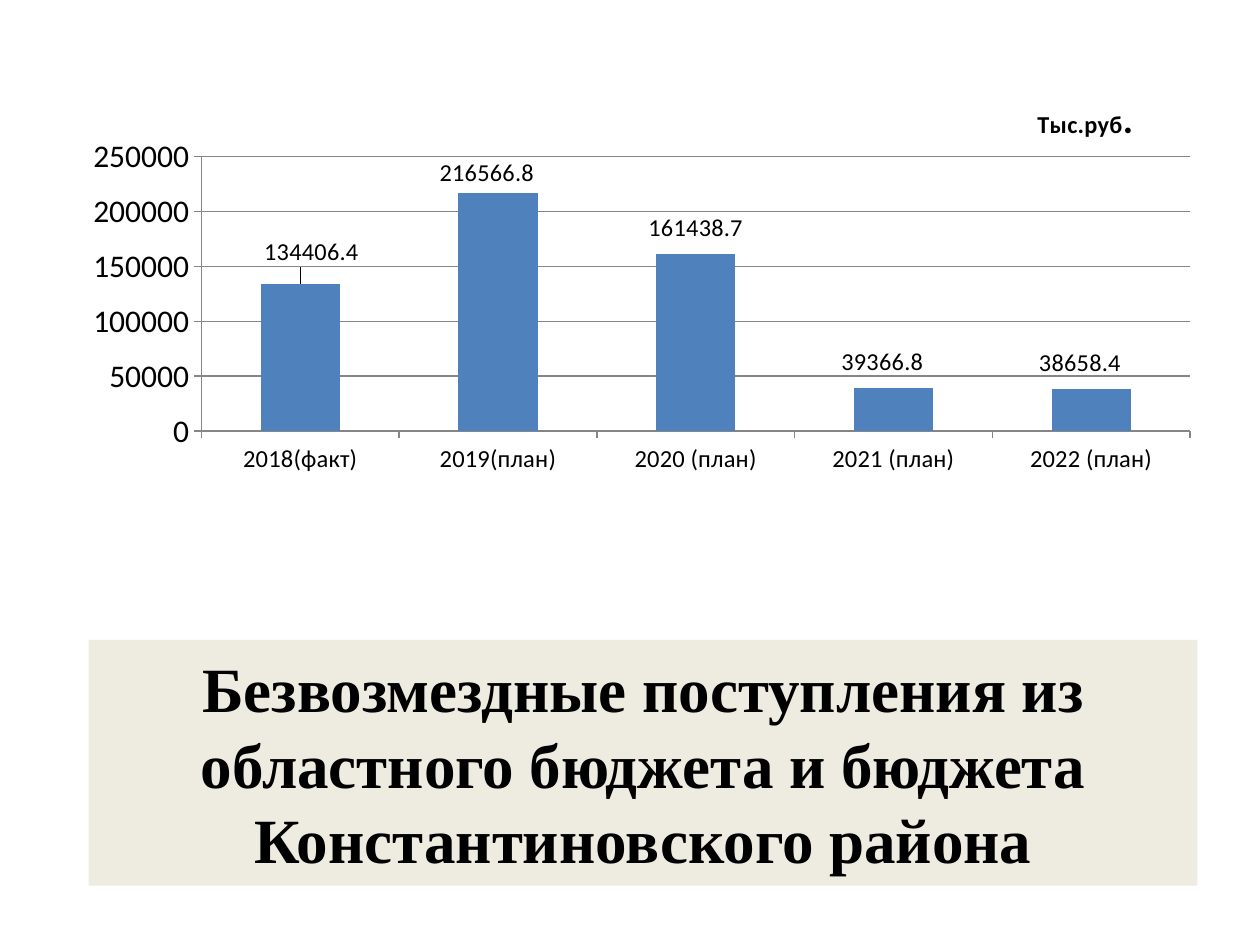
from lxml import etree
from pptx import Presentation
from pptx.chart.data import CategoryChartData
from pptx.dml.color import RGBColor
from pptx.enum.chart import XL_CHART_TYPE, XL_LABEL_POSITION, XL_TICK_MARK
from pptx.enum.shapes import MSO_SHAPE
from pptx.enum.text import MSO_ANCHOR, PP_ALIGN
from pptx.oxml.ns import qn
from pptx.util import Pt

COLUMN_CLUSTERED = XL_CHART_TYPE.COLUMN_CLUSTERED
OUTSIDE_END = XL_LABEL_POSITION.OUTSIDE_END
OUTSIDE = XL_TICK_MARK.OUTSIDE
RECTANGLE = MSO_SHAPE.RECTANGLE
MIDDLE = MSO_ANCHOR.MIDDLE
CENTER = PP_ALIGN.CENTER

BLACK = RGBColor(0x00, 0x00, 0x00)
BLUE = RGBColor(0x4F, 0x81, 0xBD)
GRAY = RGBColor(0x86, 0x86, 0x86)
BEIGE = RGBColor(0xEE, 0xEC, 0xE1)

HEADING = "Безвозмездные поступления из областного бюджета и бюджета Константиновского района"
RECEIPTS = {
    "2018(факт)": 134406.4,
    "2019(план)": 216566.8,
    "2020 (план)": 161438.7,
    "2021 (план)": 39366.8,
    "2022 (план)": 38658.4,
}
LABEL_OFFSETS = [(0.01, -0.02), (-0.01, 0), (0, -0.01), (-0.01, -0.01), (-0.01, -0.01)]


def set_font(font, size, bold=False, name="Calibri"):
    values = {"size": Pt(size), "bold": bold, "name": name}
    for attribute, value in values.items():
        setattr(font, attribute, value)
    font.color.rgb = BLACK


def make_layout(**values):
    layout = etree.Element(qn("c:layout"))
    manual = etree.SubElement(layout, qn("c:manualLayout"))
    for tag, value in values.items():
        etree.SubElement(manual, qn(f"c:{tag}"), val=str(value))
    return layout


def replace_layout(element, layout, position):
    for old in element.findall(qn("c:layout")):
        element.remove(old)
    element.insert(position, layout)


def format_axes(chart):
    value_axis = chart.value_axis
    value_axis.minimum_scale = 0
    value_axis.maximum_scale = 250000
    value_axis.major_unit = 50000
    value_axis.has_major_gridlines = True
    for axis, size in ((value_axis, 18), (chart.category_axis, 14)):
        axis.major_tick_mark = OUTSIDE
        set_font(axis.tick_labels.font, size)
        axis.format.line.color.rgb = GRAY
    value_axis.major_gridlines.format.line.color.rgb = GRAY


def add_unit_title(chart):
    chart.has_title = True
    title = chart.chart_title
    title.include_in_layout = False
    paragraph = title.text_frame.paragraphs[0]
    for text, size in (("Тыс.руб", 13.9), (".", 22)):
        run = paragraph.add_run()
        run.text = text
        set_font(run.font, size, bold=True)
    layout = make_layout(xMode="edge", yMode="edge", x=0.86, y=0.05)
    replace_layout(title._element, layout, 1)


def format_labels(series):
    labels = series.data_labels
    labels.show_value = True
    labels.position = OUTSIDE_END
    set_font(labels.font, 13.9)
    for index, (x, y) in enumerate(LABEL_OFFSETS):
        label = series.points[index].data_label
        label.position = OUTSIDE_END
        set_font(label.font, 13.9)
    for element, (x, y) in zip(labels._element.findall(qn("c:dLbl")), LABEL_OFFSETS):
        replace_layout(element, make_layout(x=x, y=y), 1)


def add_receipts_chart(slide, left, top, width, height):
    data = CategoryChartData(number_format="General")
    data.categories = list(RECEIPTS)
    data.add_series("Series 1", list(RECEIPTS.values()))
    chart = slide.shapes.add_chart(
        COLUMN_CLUSTERED, Pt(left), Pt(top), Pt(width), Pt(height), data
    ).chart
    set_font(chart.font, 18)
    chart.has_legend = False
    format_axes(chart)
    add_unit_title(chart)
    plot = chart.plots[0]
    plot.gap_width = 150
    plot.vary_by_categories = False
    series = plot.series[0]
    series.format.fill.solid()
    series.format.fill.fore_color.rgb = BLUE
    format_labels(series)
    layout = make_layout(
        layoutTarget="inner", xMode="edge", yMode="edge", x=0.116, y=0.169, w=0.884, h=0.495
    )
    replace_layout(plot._element.getparent(), layout, 0)


def add_heading(slide, left, top, width, height):
    shape = slide.shapes.add_shape(RECTANGLE, Pt(left), Pt(top), Pt(width), Pt(height))
    shape.shadow.inherit = False
    shape.fill.solid()
    shape.fill.fore_color.rgb = BEIGE
    shape.line.fill.background()
    frame = shape.text_frame
    frame.word_wrap = True
    frame.vertical_anchor = MIDDLE
    paragraph = frame.paragraphs[0]
    paragraph.alignment = CENTER
    run = paragraph.add_run()
    run.text = HEADING
    set_font(run.font, 36, bold=True, name="Times New Roman")


def main():
    presentation = Presentation()
    presentation.slide_width = Pt(720)
    presentation.slide_height = Pt(540)
    slide = presentation.slides.add_slide(presentation.slide_layouts[6])
    add_heading(slide, 50.7, 365.7, 633.6, 140.4)
    add_receipts_chart(slide, 41, 36, 639.4, 316.8)
    presentation.save("out.pptx")


if __name__ == "__main__":
    main()
